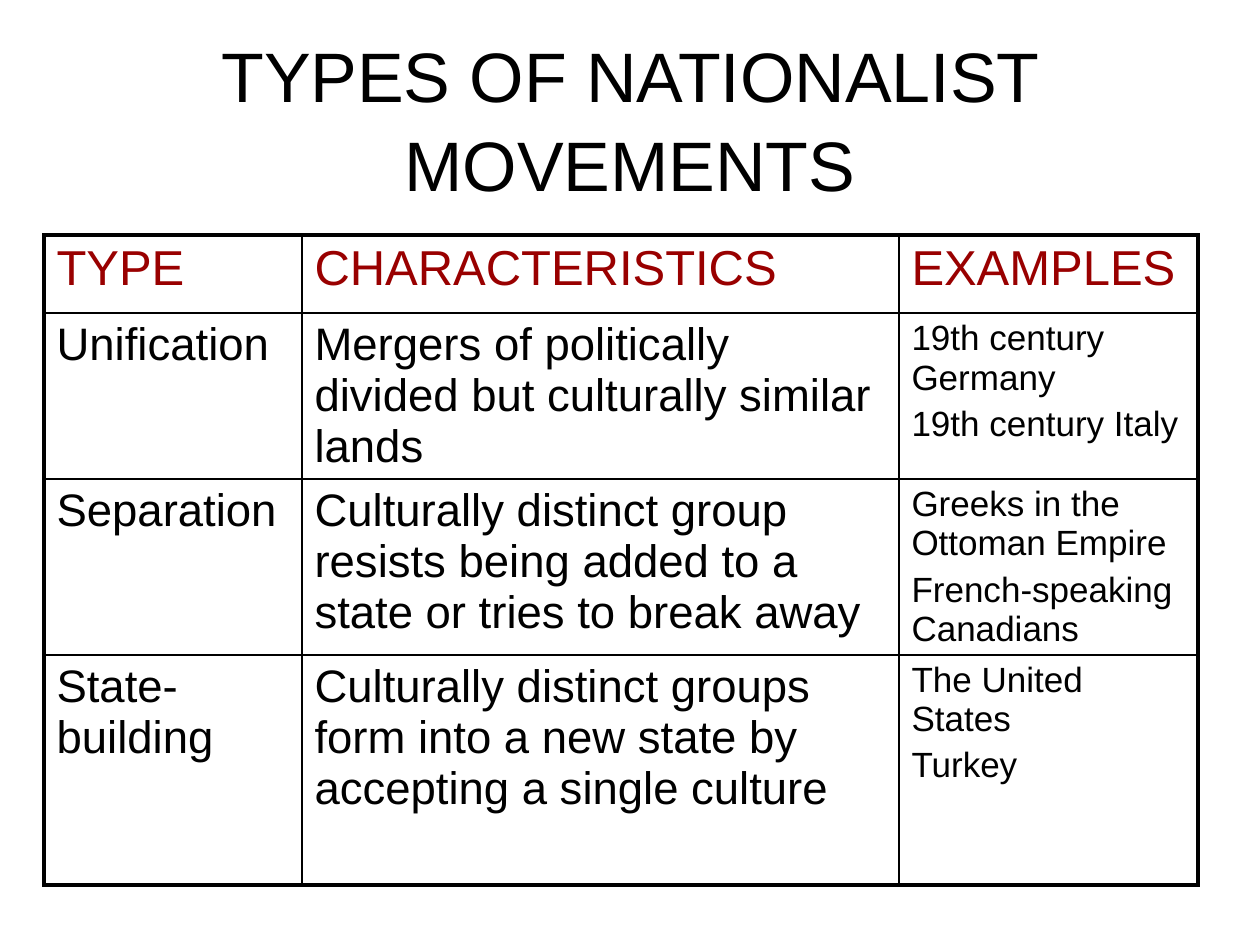
from lxml import etree
from pptx import Presentation
from pptx import util as u
from pptx.dml.color import RGBColor
from pptx.enum import text
from pptx.oxml.ns import qn

PX = 914400 / 126
BLACK, RED, WHITE = "000000", "990000", "FFFFFF"
THICK, THIN = 2.25, 1
COLUMNS = [258, 597, 299]
ROWS = [78, 166, 176, 230]
MOVEMENTS = [
    [["TYPE"], ["CHARACTERISTICS"], ["EXAMPLES"]],
    [["Unification"],
     ["Mergers of politically divided but culturally similar lands"],
     ["19th century Germany", "19th century Italy"]],
    [["Separation"],
     ["Culturally distinct group resists being added to a state or tries to break away"],
     ["Greeks in the Ottoman Empire", "French-speaking Canadians"]],
    [["State-building"],
     ["Culturally distinct groups form into a new state by accepting a single culture"],
     ["The United States", "Turkey"]],
]


def px(length):
    return u.Emu(round(length * PX))


def color(value):
    return RGBColor.from_string(value)


def add_span(para, words, size, value):
    span = para.add_run()
    span.text = words
    span.font.name = "Arial"
    span.font.size = u.Pt(size)
    span.font.color.rgb = color(value)


def place_title(page, left, top, width, height):
    title = page.shapes.title
    title.left, title.top, title.width, title.height = map(px, (left, top, width, height))
    frame = title.text_frame
    frame.word_wrap = True
    frame.auto_size = text.MSO_AUTO_SIZE.NONE
    frame.vertical_anchor = text.MSO_ANCHOR.MIDDLE
    para = frame.paragraphs[0]
    para.alignment = text.PP_ALIGN.CENTER
    para.line_spacing = 1.05
    add_span(para, "TYPES OF NATIONALIST MOVEMENTS", 40, BLACK)


def draw_borders(cell, widths):
    """Add the left, right, top and bottom lines, with widths in points."""
    properties = cell._tc.get_or_add_tcPr()
    for side, width in zip("LRTB", widths):
        line = etree.SubElement(properties, qn(f"a:ln{side}"), w=str(u.Pt(width)))
        fill = etree.SubElement(line, qn("a:solidFill"))
        etree.SubElement(fill, qn("a:srgbClr"), val=BLACK)


def fill_cell(cell, lines, size, value):
    for index, words in enumerate(lines):
        frame = cell.text_frame
        para = frame.add_paragraph() if index else frame.paragraphs[0]
        if index:
            para.space_before = u.Pt(size * 0.2)
        add_span(para, words, size, value)
    cell.fill.solid()
    cell.fill.fore_color.rgb = color(WHITE)


def place_table(page, left, top):
    table = page.shapes.add_table(len(ROWS), len(COLUMNS), px(left), px(top),
                                  px(sum(COLUMNS)), px(sum(ROWS))).table
    table.first_row = table.horz_banding = False
    for column, width in zip(table.columns, COLUMNS):
        column.width = px(width)
    last_row, last_column = len(ROWS) - 1, len(COLUMNS) - 1
    for r, height in enumerate(ROWS):
        table.rows[r].height = px(height)
        for c, lines in enumerate(MOVEMENTS[r]):
            cell = table.cell(r, c)
            edges = (c == 0, c == last_column, r == 0, r == last_row)
            draw_borders(cell, [THICK if edge else THIN for edge in edges])
            if r == 0:
                fill_cell(cell, lines, 28, RED)
            else:
                fill_cell(cell, lines, 20 if c == last_column else 26, BLACK)


def main():
    deck = Presentation()
    deck.slide_width, deck.slide_height = px(1260), px(945)
    page = deck.slides.add_slide(deck.slide_layouts[5])
    place_title(page, 63, 38, 1134, 158)
    place_table(page, 44, 235)
    deck.save("out.pptx")


if __name__ == "__main__":
    main()
